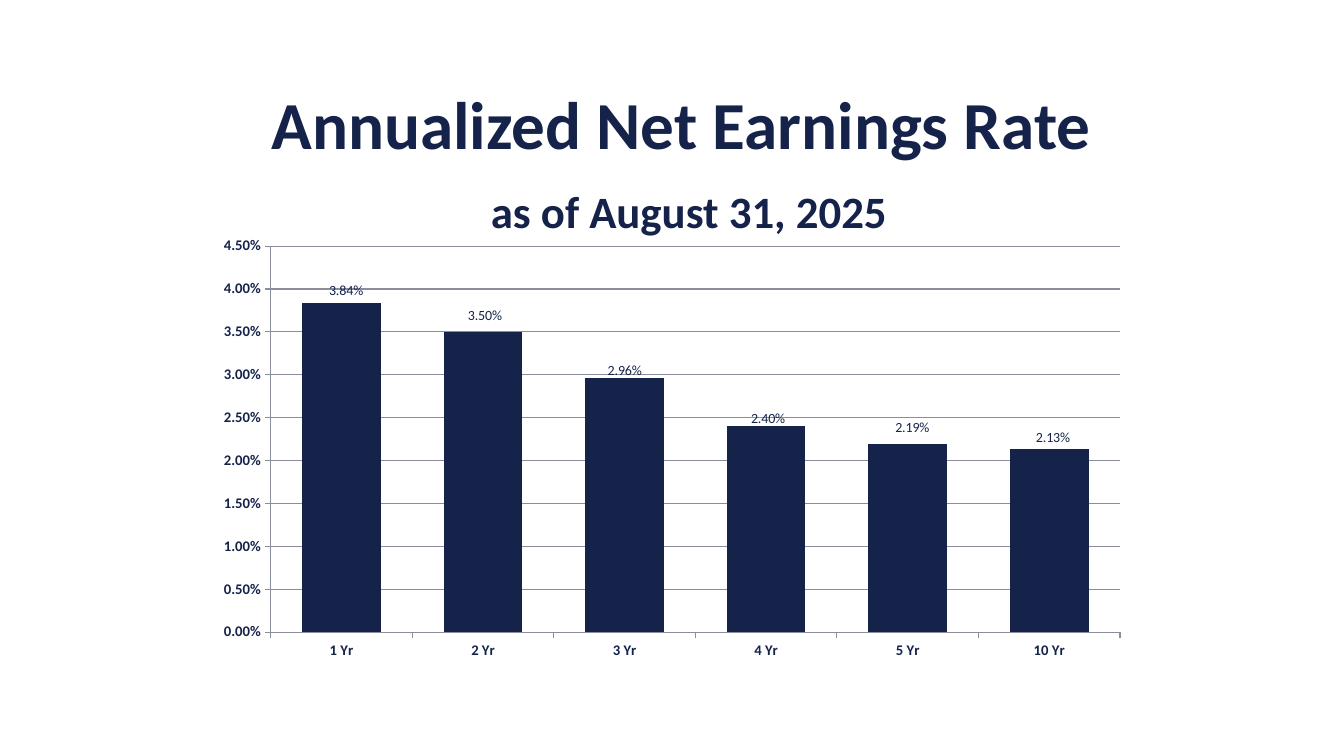
import pptx
import pptx.chart.data
import pptx.dml.color
import pptx.enum.chart
import pptx.enum.text
import pptx.oxml
import pptx.oxml.ns
import pptx.util
from dataclasses import dataclass

Cm, Pt = pptx.util.Cm, pptx.util.Pt
RGB = pptx.dml.color.RGBColor.from_string

# Content
HEADS = ["Annualized Net Earnings Rate", "as of August 31, 2025"]
# Term, rate, label shift as a share of the chart (x, y)
RATES = [
    ("1 Yr", 0.0384, (0.005, 0)),
    ("2 Yr", 0.035, (0.002, -0.01)),
    ("3 Yr", 0.0296, (0, 0.01)),
    ("4 Yr", 0.024, (0.002, 0.01)),
    ("5 Yr", 0.0219, (0.005, -0.01)),
    ("10 Yr", 0.0213, (0.004, 0)),
]
PERCENT = "0.00%"
PLOT = {"x": 0.065, "y": 0.031, "w": 0.931, "h": 0.833}


@dataclass
class Theme:
    face: str = "Calibri"
    head: str = "152249"
    navy: str = "15234A"
    rule: str = "8A8D9B"
    sizes: tuple = (48, 32)
    base: float = 18
    axis: float = 10.5
    label: float = 10


theme = Theme()


def style(font, size, color, bold=False):
    font.name, font.size, font.bold = theme.face, Pt(size), bold
    font.color.rgb = RGB(color)


def layout(places, inner=False):
    """Build a manual chart layout from shares of the chart size."""
    rows = '<c:layoutTarget val="inner"/>' if inner else ""
    if inner:
        rows += '<c:xMode val="edge"/><c:yMode val="edge"/>'
    rows += "".join(f'<c:{key} val="{val}"/>' for key, val in places.items())
    return pptx.oxml.parse_xml(
        f'<c:layout {pptx.oxml.ns.nsdecls("c")}>'
        f"<c:manualLayout>{rows}</c:manualLayout></c:layout>")


def add_title(slide):
    title = slide.shapes.title
    title.left, title.top = Cm(6.05), Cm(1.88)
    title.width, title.height = Cm(22.25), Cm(4.37)
    frame = title.text_frame
    frame.text = "\n".join(HEADS)
    frame.word_wrap = True
    frame.margin_top = Cm(0.2)
    frame.vertical_anchor = pptx.enum.text.MSO_ANCHOR.TOP
    frame.auto_size = pptx.enum.text.MSO_AUTO_SIZE.NONE
    for para, size in zip(frame.paragraphs, theme.sizes):
        para.alignment = pptx.enum.text.PP_ALIGN.CENTER
        style(para.runs[0].font, size, theme.head, True)
    # The date sits lower and a little to the right
    date = frame.paragraphs[1]
    date.space_before = Pt(15)
    date._p.get_or_add_pPr().set("marL", str(Cm(0.38)))


def add_rates(slide):
    data = pptx.chart.data.CategoryChartData(number_format=PERCENT)
    data.categories = [term for term, _, _ in RATES]
    data.add_series("Series 1", [rate for _, rate, _ in RATES])
    chart = slide.shapes.add_chart(
        pptx.enum.chart.XL_CHART_TYPE.COLUMN_CLUSTERED,
        Cm(5.33), Cm(5.84), Cm(22.99), Cm(11.68), data).chart
    chart.has_legend = chart.has_title = False
    style(chart.font, theme.base, theme.navy)

    # Plot area
    area = chart._chartSpace.chart.plotArea
    for old in area.findall(pptx.oxml.ns.qn("c:layout")):
        area.remove(old)
    area.insert(0, layout(PLOT, inner=True))

    # Axes
    scale = chart.value_axis
    scale.minimum_scale, scale.maximum_scale = 0, 0.045
    scale.major_unit = 0.005
    scale.has_major_gridlines = True
    scale.tick_labels.number_format = PERCENT
    scale.tick_labels.number_format_is_linked = False
    for axis in (scale, chart.category_axis):
        axis.major_tick_mark = pptx.enum.chart.XL_TICK_MARK.OUTSIDE
        axis.minor_tick_mark = pptx.enum.chart.XL_TICK_MARK.NONE
        style(axis.tick_labels.font, theme.axis, theme.navy, True)
    for part in (scale, chart.category_axis, scale.major_gridlines):
        part.format.line.color.rgb = RGB(theme.rule)
        part.format.line.width = Pt(0.75)

    # Bars and labels
    plot = chart.plots[0]
    plot.gap_width, plot.vary_by_categories = 80, False
    bars = plot.series[0]
    bars.format.fill.solid()
    bars.format.fill.fore_color.rgb = RGB(theme.navy)
    above = pptx.enum.chart.XL_LABEL_POSITION.OUTSIDE_END
    labels = bars.data_labels
    labels.show_value, labels.position = True, above
    labels.number_format, labels.number_format_is_linked = PERCENT, False
    style(labels.font, theme.label, theme.navy)
    for index, (_, _, (right, down)) in enumerate(RATES):
        label = bars.points[index].data_label
        label.position = above
        style(label.font, theme.label, theme.navy)
        node = labels._element.findall(pptx.oxml.ns.qn("c:dLbl"))[index]
        node.insert(1, layout({"x": right, "y": down}))


def main():
    deck = pptx.Presentation()
    deck.slide_width, deck.slide_height = Cm(33.87), Cm(19.05)
    slide = deck.slides.add_slide(deck.slide_layouts[5])
    add_title(slide)
    add_rates(slide)
    deck.save("out.pptx")


if __name__ == "__main__":
    main()
